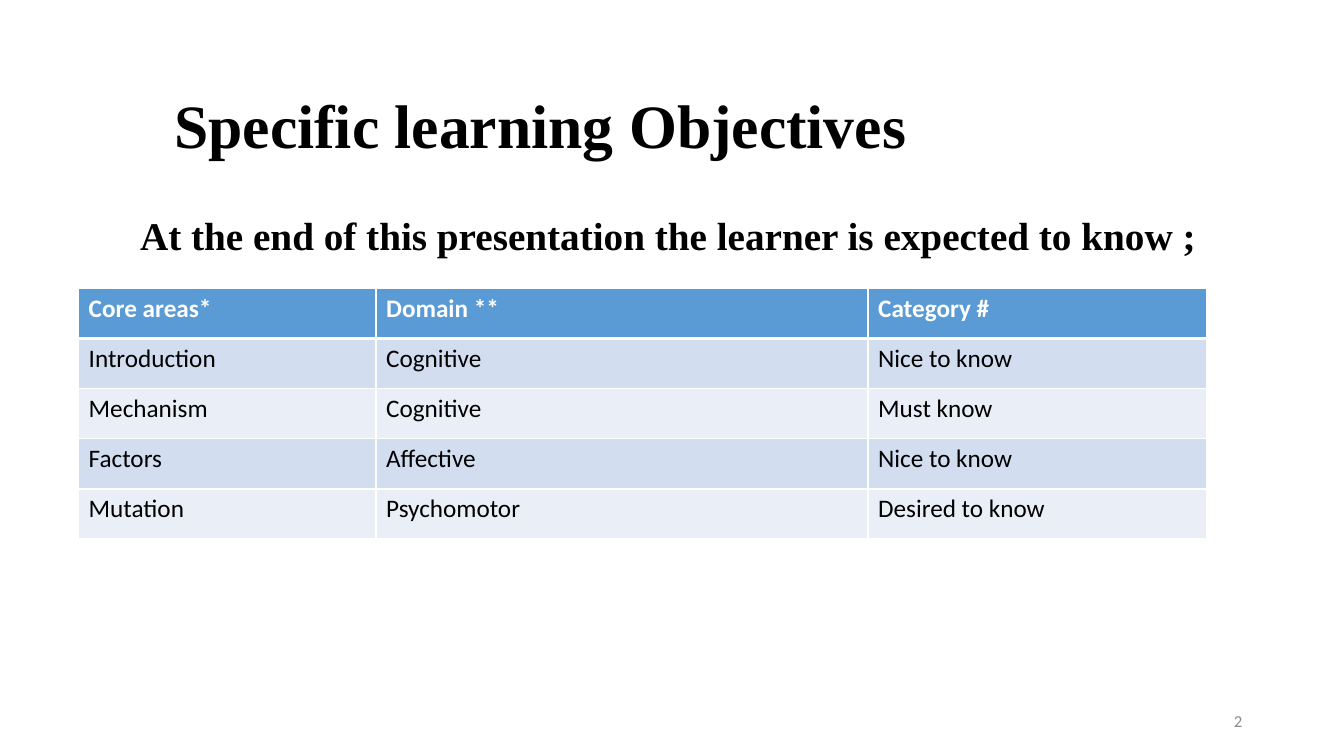
from lxml import etree
from pptx import Presentation
from pptx.dml.color import RGBColor
from pptx.enum.text import MSO_ANCHOR, PP_ALIGN
from pptx.oxml.ns import qn
from pptx.util import Inches, Pt

MIDDLE, TOP = MSO_ANCHOR.MIDDLE, MSO_ANCHOR.TOP
LEFT, RIGHT = PP_ALIGN.LEFT, PP_ALIGN.RIGHT

COLORS = {
    "ink": "000000",
    "paper": "FFFFFF",
    "header": "5B9BD5",
    "odd_row": "D2DEEF",
    "even_row": "EAEFF7",
    "number": "8C8C8C",
}
SERIF, SANS = "Times New Roman", "Calibri"

COLUMN_WIDTHS = (2.95, 4.88, 3.36)
OBJECTIVES = (
    ("Core areas*", "Domain **", "Category #"),
    ("Introduction", "Cognitive", "Nice to know"),
    ("Mechanism", "Cognitive", "Must know"),
    ("Factors", "Affective", "Nice to know"),
    ("Mutation", "Psychomotor", "Desired to know"),
)


def rgb(name):
    return RGBColor.from_string(COLORS[name])


def write(frame, text, font, size, color, bold=False):
    frame.text = text
    para = frame.paragraphs[0]
    for span in para.runs:
        span.font.name = font
        span.font.size = Pt(size)
        span.font.bold = bold
        span.font.color.rgb = rgb(color)
    return para


def add_text(page, box, text, font, size, color, bold=False,
             anchor=TOP, align=LEFT, line_spacing=1.0):
    frame = page.shapes.add_textbox(*map(Inches, box)).text_frame
    frame.word_wrap = True
    frame.vertical_anchor = anchor
    para = write(frame, text, font, size, color, bold)
    para.alignment = align
    para.line_spacing = line_spacing


def set_borders(cell, bottom_width):
    """Put white lines round a cell; they must precede its fill in the XML."""
    properties = cell._tc.get_or_add_tcPr()
    widths = {"a:lnL": 1, "a:lnR": 1, "a:lnT": 1, "a:lnB": bottom_width}
    for position, (tag, width) in enumerate(widths.items()):
        line = etree.Element(qn(tag), w=str(Pt(width)))
        fill = etree.SubElement(line, qn("a:solidFill"))
        etree.SubElement(fill, qn("a:srgbClr"), val=COLORS["paper"])
        properties.insert(position, line)


def add_objectives_table(page, box):
    table = page.shapes.add_table(
        len(OBJECTIVES), len(COLUMN_WIDTHS), *map(Inches, box)).table
    for column, width in zip(table.columns, COLUMN_WIDTHS):
        column.width = Inches(width)
    for index, texts in enumerate(OBJECTIVES):
        is_header = index == 0
        band = "header" if is_header else "odd_row" if index % 2 else "even_row"
        for cell, text in zip(table.rows[index].cells, texts):
            cell.fill.solid()
            cell.fill.fore_color.rgb = rgb(band)
            set_borders(cell, 3 if is_header else 1)
            write(cell.text_frame, text, SANS, 18,
                  "paper" if is_header else "ink", is_header)


def build_objectives_slide(deck):
    page = deck.slides.add_slide(deck.slide_layouts[6])
    add_text(page, (1.63, 0.67, 10.13, 1.21), "Specific learning Objectives",
             SERIF, 44, "ink", bold=True, anchor=MIDDLE, line_spacing=0.9)
    add_objectives_table(page, (0.78, 2.86, sum(COLUMN_WIDTHS), 2.49))
    add_text(page, (1.29, 2.05, 10.71, 0.57),
             "At the end of this presentation the learner is expected to know ;",
             SERIF, 28, "ink", bold=True)
    add_text(page, (9.42, 6.95, 3, 0.4), "2", SANS, 12, "number",
             anchor=MIDDLE, align=RIGHT)


def main():
    deck = Presentation()
    deck.slide_width, deck.slide_height = Inches(13.33), Inches(7.5)
    build_objectives_slide(deck)
    deck.save("out.pptx")


if __name__ == "__main__":
    main()
